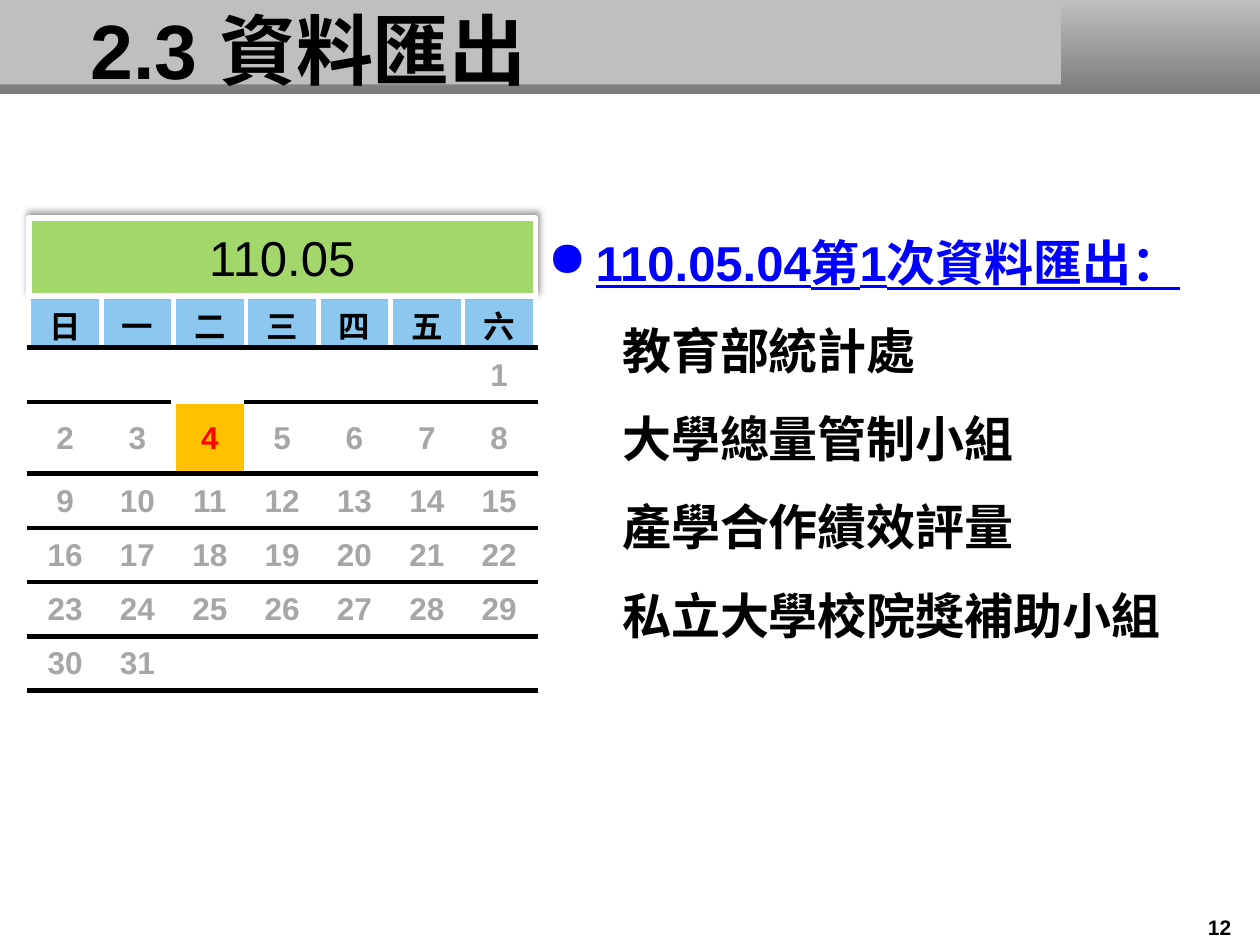
import pptx
import pptx.dml.color
import pptx.enum.shapes
import pptx.enum.text
import pptx.oxml
import pptx.oxml.ns
import pptx.util
from pptx.dml.color import RGBColor
from pptx.util import Inches

BLACK = RGBColor(0x00, 0x00, 0x00)
WHITE = RGBColor(0xFF, 0xFF, 0xFF)
SILVER = RGBColor(0xBF, 0xBF, 0xBF)
STEEL = RGBColor(0x7B, 0x7B, 0x7B)
GRAY = RGBColor(0xA6, 0xA6, 0xA6)
BLUE = RGBColor(0x00, 0x00, 0xFF)
SKY = RGBColor(0x8C, 0xC7, 0xEF)
GREEN = RGBColor(0xA4, 0xD7, 0x6B)
AMBER = RGBColor(0xFF, 0xC0, 0x00)
RED = RGBColor(0xFF, 0x00, 0x00)

MIDDLE = pptx.enum.text.MSO_ANCHOR.MIDDLE
CENTER = pptx.enum.text.PP_ALIGN.CENTER
DAYS = "日一二三四五六"
FIRST, LAST, MARKED = 6, 31, 4
UNITS = [
    "教育部統計處",
    "大學總量管制小組",
    "產學合作績效評量",
    "私立大學校院獎補助小組",
]


def node(xml):
    """Parse an element whose first tag still lacks the drawing namespace."""
    tag, rest = xml.split(" ", 1)
    return pptx.oxml.parse_xml(f"{tag} {pptx.oxml.ns.nsdecls('a')} {rest}")


class Deck:
    font = "Arial"
    asian = "Noto Sans CJK SC"

    def __init__(self):
        self.show = pptx.Presentation()
        self.show.slide_width = Inches(10)
        self.show.slide_height = Inches(7.5)
        self.slide = self.show.slides.add_slide(self.show.slide_layouts[6])

    def style(self, para, size, color=BLACK, bold=True, line=False):
        for run in para.runs:
            font = run.font
            font.name, font.size = self.font, pptx.util.Pt(size)
            font.bold, font.underline = bold, line
            font.color.rgb = color
            font.fill  # colour is in place before the typeface below
            latin = run.font._element.find(pptx.oxml.ns.qn("a:latin"))
            latin.addnext(node(f'<a:ea typeface="{self.asian}"/>'))

    def rect(self, box, fill=None):
        kind = pptx.enum.shapes.MSO_SHAPE.RECTANGLE
        shape = self.slide.shapes.add_shape(kind, *map(Inches, box))
        shape.shadow.inherit = False
        shape.line.fill.background()
        if fill is not None:
            shape.fill.solid()
            shape.fill.fore_color.rgb = fill
        return shape

    def fade(self, box, top, base):
        fill = self.rect(box).fill
        fill.gradient()
        fill.gradient_angle = 270
        for stop, color in zip(fill.gradient_stops, (top, base)):
            stop.color.rgb = color

    def text(self, box, words, size, align=None):
        frame = self.slide.shapes.add_textbox(*map(Inches, box)).text_frame
        frame.word_wrap = True
        frame.vertical_anchor = MIDDLE
        frame.text = words
        frame.paragraphs[0].alignment = align
        self.style(frame.paragraphs[0], size)

    def list(self, box, head, items):
        """Add a bulleted, underlined heading with tabbed lines below it."""
        frame = self.slide.shapes.add_textbox(*map(Inches, box)).text_frame
        frame.word_wrap = True
        frame.text = "\n".join([head] + ["\t" + item for item in items])
        for i, para in enumerate(frame.paragraphs):
            para.line_spacing = 1.5
            props = para._p.get_or_add_pPr()
            if i == 0:
                props.set("marL", str(Inches(0.38)))
                props.set("indent", str(-Inches(0.38)))
                props.append(node('<a:buChar char="●"/>'))
                self.style(para, 28, BLUE, line=True)
            else:
                stop = f'<a:tab pos="{Inches(0.59)}" algn="l"/>'
                props.append(node(f"<a:tabLst >{stop}</a:tabLst>"))
                self.style(para, 28)

    def banner(self, box, words):
        shape = self.rect(box, GREEN)
        shape.line.color.rgb = WHITE
        shape.line.width = pptx.util.Pt(3)
        frame = shape.text_frame
        frame.vertical_anchor = MIDDLE
        frame.text = words
        frame.paragraphs[0].alignment = CENTER
        self.style(frame.paragraphs[0], 28, bold=False)
        effect = shape._element.spPr.find(pptx.oxml.ns.qn("a:effectLst"))
        effect.append(node(
            f'<a:outerShdw blurRad="{pptx.util.Pt(4)}" dist="{pptx.util.Pt(3)}"'
            ' dir="16200000" rotWithShape="0"><a:srgbClr val="000000">'
            '<a:alpha val="40000"/></a:srgbClr></a:outerShdw>'))

    def edges(self, cell, top, base):
        props = cell._tc.get_or_add_tcPr()
        colors = {"L": WHITE, "R": WHITE, "T": top, "B": base}
        for i, (side, color) in enumerate(colors.items()):
            props.insert(i, node(
                f'<a:ln{side} w="{pptx.util.Pt(3)}"><a:solidFill>'
                f'<a:srgbClr val="{color}"/></a:solidFill></a:ln{side}>'))

    def cell(self, cell, words, color, fill=None):
        cell.vertical_anchor = MIDDLE
        if fill is None:
            cell.fill.background()
        else:
            cell.fill.solid()
            cell.fill.fore_color.rgb = fill
        cell.text = words
        para = cell.text_frame.paragraphs[0]
        para.alignment = CENTER
        self.style(para, 18, color)

    def month(self, box, rows):
        """Add the calendar grid: a weekday row and one row for each week."""
        count = len(DAYS)
        frame = self.slide.shapes.add_table(len(rows), count, *map(Inches, box))
        table = frame.table
        table.first_row = table.horz_banding = False
        for col in table.columns:
            col.width = Inches(box[2] / count)
        for r, high in enumerate(rows):
            table.rows[r].height = Inches(high)
            for c in range(count):
                cell = table.cell(r, c)
                day = (r - 1) * count + c - FIRST + 1
                if r == 0:
                    self.cell(cell, DAYS[c], BLACK, SKY)
                else:
                    words = str(day) if 1 <= day <= LAST else ""
                    cell.margin_left = cell.margin_right = Inches(0.01)
                    cell.margin_top, cell.margin_bottom = Inches(0.01), 0
                    if day == MARKED:
                        self.cell(cell, words, RED, AMBER)
                    else:
                        self.cell(cell, words, GRAY)
                above = r == 0 or day == MARKED
                below = r > 0 and day + count == MARKED
                self.edges(cell, WHITE if above else BLACK,
                           WHITE if below else BLACK)


def main():
    deck = Deck()
    deck.fade((0, 0, 10.01, 0.75), SILVER, STEEL)
    deck.rect((0, 0, 8.42, 0.67), SILVER)
    deck.text((9.36, 7.22, 0.64, 0.28), "12", 12, CENTER)
    deck.text((0.62, 0.05, 7.76, 0.67), "2.3 資料匯出", 44)
    deck.list((4.25, 1.56, 5.56, 3.64), "110.05.04第1次資料匯出：", UNITS)
    deck.month((0.23, 2.35, 4.02, 3.15), [0.41, 0.43, 0.57] + [0.43] * 4)
    deck.banner((0.23, 1.73, 4.02, 0.62), "110.05")
    deck.show.save("out.pptx")


if __name__ == "__main__":
    main()
